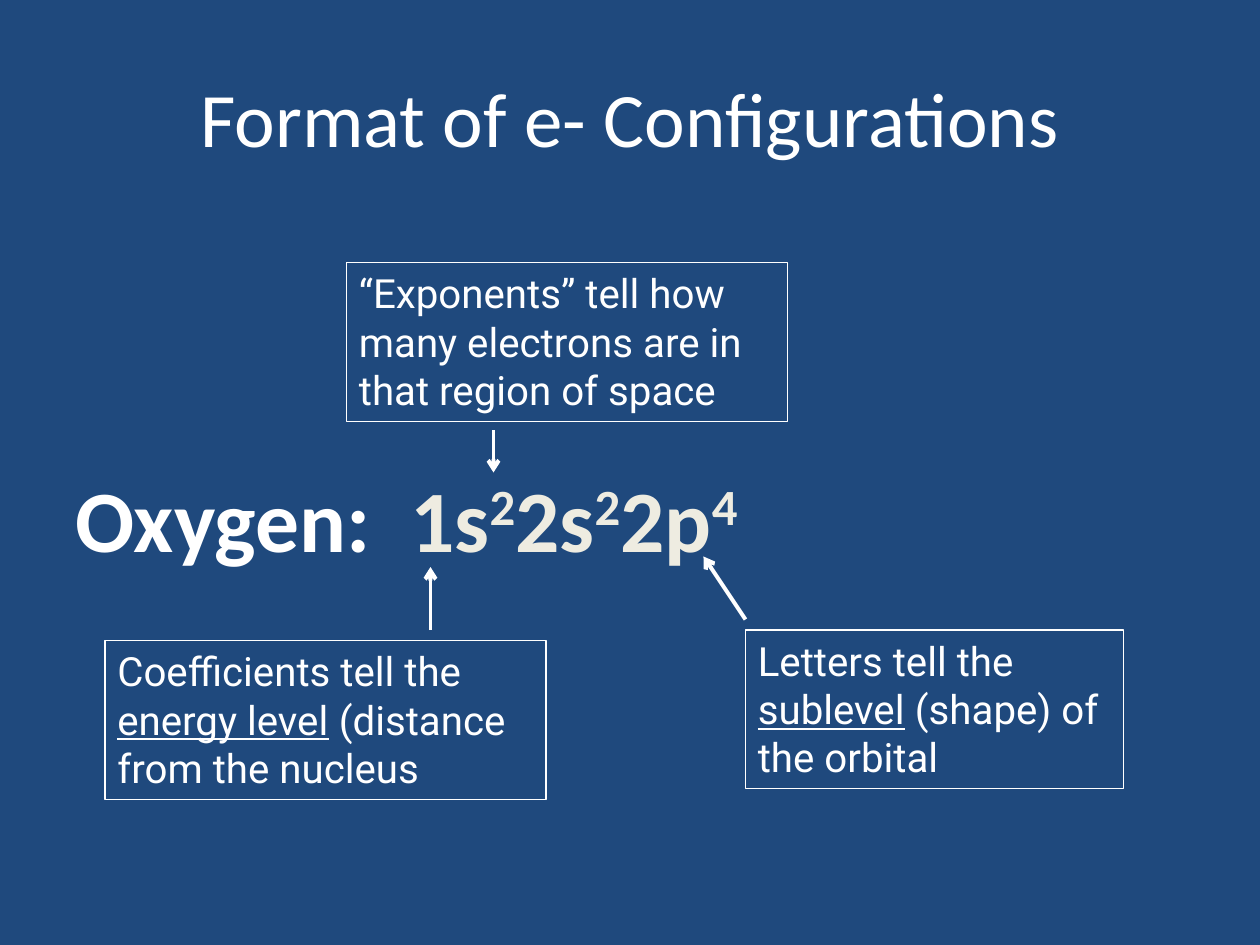
from lxml.etree import SubElement
from pptx import Presentation
from pptx.dml.color import RGBColor
from pptx.enum.shapes import MSO_CONNECTOR, MSO_SHAPE
from pptx.enum.text import MSO_ANCHOR, MSO_AUTO_SIZE, PP_ALIGN
from pptx.oxml.ns import qn
from pptx.util import Pt

COLORS = {"navy": "1F497D", "white": "FFFFFF", "cream": "EEECE1"}


class SlideBuilder:
    """Holds the style and the current slide."""

    title = {"name": "Calibri", "size": Pt(44)}
    formula = {"name": "Calibri", "size": Pt(50), "bold": True}
    callout = {"name": "Roboto", "size": Pt(23)}

    def __init__(self, slide):
        self.slide = slide
        background = slide.background.fill
        background.solid()
        background.fore_color.rgb = self.color("navy")

    def color(self, name):
        return RGBColor.from_string(COLORS[name])

    def set_text(self, frame, parts, style, align=PP_ALIGN.LEFT):
        frame.word_wrap = True
        paragraph = frame.paragraphs[0]
        paragraph.alignment = align
        for wording, color, extra in parts:
            run = paragraph.add_run()
            run.text = wording
            run.font.color.rgb = self.color(color)
            for key, value in {**style, **extra}.items():
                if key == "baseline":
                    run._r.get_or_add_rPr().set(key, value)
                else:
                    setattr(run.font, key, value)

    def add_text(self, box, parts, style, anchor, align=PP_ALIGN.LEFT):
        frame = self.slide.shapes.add_textbox(*map(Pt, box)).text_frame
        frame.vertical_anchor = anchor
        self.set_text(frame, parts, style, align)

    def add_callout(self, left, top, width, parts):
        callout = self.slide.shapes.add_shape(
            MSO_SHAPE.RECTANGLE, Pt(left), Pt(top), Pt(width), Pt(90.7))
        callout.shadow.inherit = False
        callout.fill.background()
        callout.line.color.rgb = self.color("white")
        callout.line.width = Pt(0.75)
        callout.text_frame.vertical_anchor = MSO_ANCHOR.TOP
        self.set_text(callout.text_frame, parts, self.callout)
        callout.text_frame.auto_size = MSO_AUTO_SIZE.SHAPE_TO_FIT_TEXT

    def add_arrow(self, *ends):
        arrow = self.slide.shapes.add_connector(MSO_CONNECTOR.STRAIGHT, *map(Pt, ends))
        arrow.line.color.rgb = self.color("white")
        arrow.line.width = Pt(2.25)
        properties = arrow._element.spPr
        SubElement(properties.find(qn("a:ln")), qn("a:tailEnd"), type="arrow")
        SubElement(properties, qn("a:effectLst"))


def main():
    deck = Presentation()
    deck.slide_width, deck.slide_height = Pt(720), Pt(540)
    builder = SlideBuilder(deck.slides.add_slide(deck.slide_layouts[6]))

    builder.add_text((36, 21.6, 648, 90), [("Format of e- Configurations", "white", {})],
                     builder.title, MSO_ANCHOR.MIDDLE, PP_ALIGN.CENTER)

    configuration = [("Oxygen:  ", "white", {})]
    for sublevel, electrons in (("1s", "2"), ("2s", "2"), ("2p", "4")):
        configuration += [(sublevel, "cream", {}),
                          (electrons, "cream", {"baseline": "30000"})]
    builder.add_text((36, 262, 648, 70), configuration, builder.formula, MSO_ANCHOR.TOP)

    for ends in ((246, 360, 246, 324), (426, 354, 402, 318), (282, 246, 282, 270)):
        builder.add_arrow(*ends)

    underlined = {"underline": True}
    builder.add_callout(60, 366, 252, [
        ("Coefficients tell the ", "white", {}),
        ("energy level", "white", underlined),
        (" (distance from the nucleus", "white", {})])
    builder.add_callout(426, 360, 216, [
        ("Letters tell the ", "white", {}),
        ("sublevel", "white", underlined),
        (" (shape) of the orbital", "white", {})])
    builder.add_callout(198, 150, 252, [
        ("“Exponents” tell how many electrons are in that region of space", "white", {})])

    deck.save("out.pptx")


if __name__ == "__main__":
    main()
